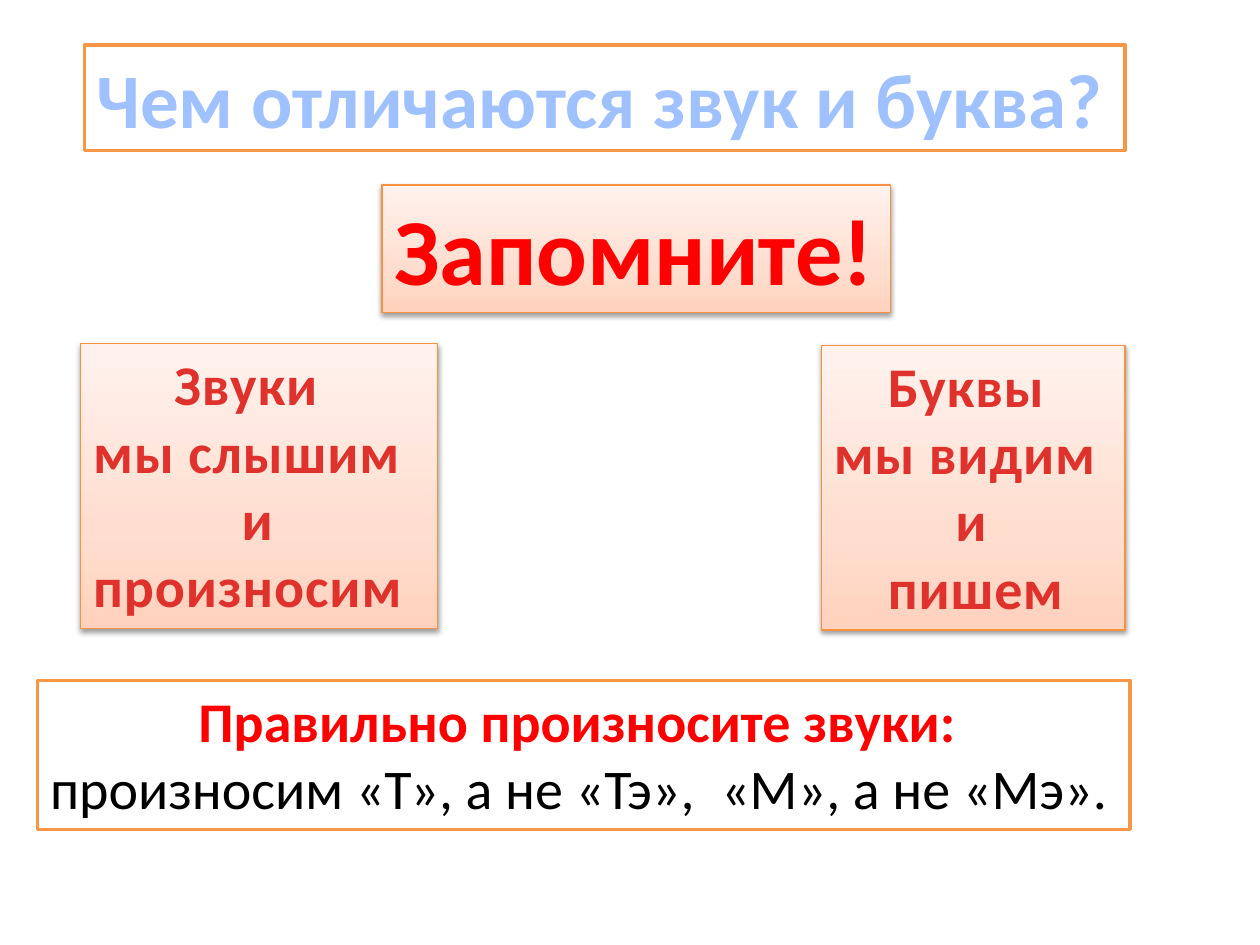
import pptx
import pptx.dml.color
import pptx.enum.text
import pptx.oxml.ns
import pptx.util
from lxml import etree

COLORS = {
    "white": "FFFFFF",
    "black": "000000",
    "red": "FF0000",
    "title": "A0C1FF",
    "crimson": "E0322D",
    "frame": "F79646",
    "card_edge": "F69240",
}
CARD_STOPS = [(0, "FFD2BD"), (35, "FFDED0"), (100, "FFF2ED")]
Cm = pptx.util.Cm
Pt = pptx.util.Pt
qn = pptx.oxml.ns.qn


class LessonSlide:
    font = "Calibri"

    def __init__(self, presentation):
        self.slide = presentation.slides.add_slide(presentation.slide_layouts[6])

    def color(self, name):
        return pptx.dml.color.RGBColor.from_string(COLORS[name])

    def box(self, left, top, width, height):
        shape = self.slide.shapes.add_textbox(Cm(left), Cm(top), Cm(width), Cm(height))
        shape.shadow.inherit = False
        shape.text_frame.word_wrap = True
        shape.text_frame.auto_size = pptx.enum.text.MSO_AUTO_SIZE.SHAPE_TO_FIT_TEXT
        return shape

    def outline(self, shape, color, width):
        shape.line.color.rgb = self.color(color)
        shape.line.width = Pt(width)

    def framed_box(self, *place):
        shape = self.box(*place)
        shape.fill.solid()
        shape.fill.fore_color.rgb = self.color("white")
        self.outline(shape, "frame", 2)
        return shape.text_frame

    def card(self, *place):
        shape = self.box(*place)
        shape.fill.gradient()
        shape.fill.gradient_angle = 90
        properties = shape._element.spPr
        stops = properties.find(".//" + qn("a:gsLst"))
        for stop in list(stops):
            stops.remove(stop)
        for position, value in CARD_STOPS:
            stop = etree.SubElement(stops, qn("a:gs"), pos=str(position * 1000))
            etree.SubElement(stop, qn("a:srgbClr"), val=value)
        self.outline(shape, "card_edge", 0.75)
        shadow = etree.SubElement(
            properties.find(qn("a:effectLst")), qn("a:outerShdw"),
            blurRad=str(Pt(3.1)), dist=str(Pt(1.6)), dir="5400000", rotWithShape="0",
        )
        shade = etree.SubElement(shadow, qn("a:srgbClr"), val=COLORS["black"])
        etree.SubElement(shade, qn("a:alpha"), val="38000")
        return shape.text_frame

    def paragraph(self, frame, first=False, indent=0):
        paragraph = frame.paragraphs[0] if first else frame.add_paragraph()
        if indent:
            settings = paragraph._p.get_or_add_pPr()
            settings.set("marL", "0")
            settings.set("indent", str(Cm(indent)))
        return paragraph

    def run(self, paragraph, text, size, color, bold=True, spacing=0):
        run = paragraph.add_run()
        run.text = text
        run.font.name = self.font
        run.font.size = Pt(size)
        run.font.bold = bold
        run.font.color.rgb = self.color(color)
        if spacing:
            run._r.get_or_add_rPr().set("spc", str(round(spacing * 100)))

    def definition_card(self, place, lines):
        frame = self.card(*place)
        for number, (text, indent) in enumerate(lines):
            paragraph = self.paragraph(frame, number == 0, indent)
            self.run(paragraph, text, 32, "crimson", spacing=0.5)


def main():
    presentation = pptx.Presentation()
    presentation.slide_width = Cm(25.4)
    presentation.slide_height = Cm(19.05)
    lesson = LessonSlide(presentation)

    question = lesson.framed_box(1.7, 0.91, 20.98, 2.13)
    lesson.run(lesson.paragraph(question, True), "Чем отличаются звук и буква?", 44, "title")

    lesson.definition_card(
        (1.63, 6.93, 7.19, 5.74),
        [("Звуки", 1.63), ("мы слышим", 0), ("и произносим", 2.99)],
    )
    lesson.definition_card(
        (16.56, 6.96, 6.12, 5.74),
        [("Буквы", 1.09), ("мы видим", 0), ("и", 2.45), ("пишем", 1.09)],
    )

    reminder = lesson.card(7.7, 3.73, 10.26, 2.57)
    lesson.run(lesson.paragraph(reminder, True), "Запомните!", 54, "red")

    pronunciation = lesson.framed_box(0.76, 13.72, 22.02, 3)
    heading = lesson.paragraph(pronunciation, True)
    heading.alignment = pptx.enum.text.PP_ALIGN.CENTER
    lesson.run(heading, "Правильно произносите звуки: ", 32, "red")
    examples = lesson.paragraph(pronunciation)
    for text, spacing in [("произносим «Т», а не «Тэ»,", 0), (" ", 7.2), ("«М», а не «Мэ».", 0)]:
        lesson.run(examples, text, 32, "black", bold=False, spacing=spacing)

    presentation.save("out.pptx")


if __name__ == "__main__":
    main()
